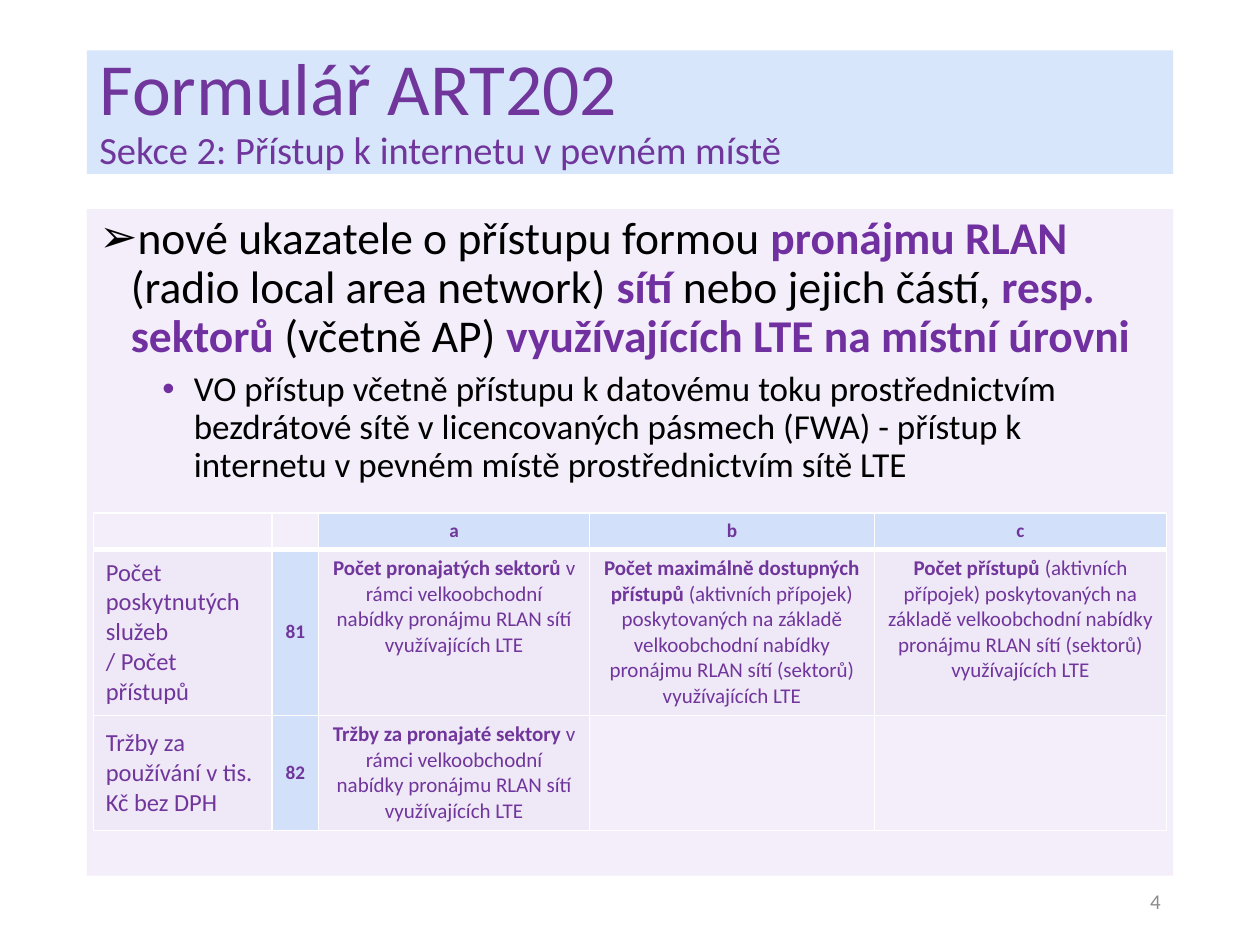
import pptx
import pptx.util
import pptx.dml.color
import pptx.enum.shapes
import pptx.enum.text
import pptx.oxml.ns
import lxml.etree

Inches, Pt = pptx.util.Inches, pptx.util.Pt
ALIGN, ANCHOR = pptx.enum.text.PP_ALIGN, pptx.enum.text.MSO_ANCHOR
qn = pptx.oxml.ns.qn

THEME = {
    "font": "Calibri", "alpha": 65, "spacing": 0.9,
    "blue": "C2D9FA", "lilac": "EEE5F7", "purple": "70369B", "accent": "7030A0",
    "black": "000000", "white": "FFFFFF", "grey": "8C8C8C",
    "title": 42, "subtitle": 22, "body": 26, "detail": 20,
    "label": 14, "cell": 12, "code": 11, "number": 12,
}

# A run is (text, is_bold).
TITLE = [("Formulář ART202", "title"),
         ("Sekce 2: Přístup k internetu v pevném místě", "subtitle")]
BODY = [
    {"runs": [("nové ukazatele o přístupu formou ", False), ("pronájmu RLAN ", True),
              ("(radio local area network) ", False), ("sítí ", True),
              ("nebo jejich částí, ", False), ("resp. sektorů", True),
              (" (včetně AP) ", False), ("využívajících LTE na místní úrovni", True)],
     "size": "body", "level": 0, "indent": 0.25, "bullet": "➢", "bullet_color": "black", "before": 0},
    {"runs": [("VO přístup včetně přístupu k datovému toku prostřednictvím bezdrátové sítě "
               "v licencovaných pásmech (FWA) - přístup k internetu v pevném místě "
               "prostřednictvím sítě LTE", False)],
     "size": "detail", "level": 1, "indent": 0.75, "bullet": "•", "bullet_color": "accent", "before": 5},
]
LEASE = "v rámci velkoobchodní nabídky pronájmu RLAN sítí využívajících LTE"
ACCESS = ("(aktivních přípojek) poskytovaných na základě velkoobchodní nabídky "
          "pronájmu RLAN sítí (sektorů) využívajících LTE")
HEADER = ["", "", "a", "b", "c"]
ROWS = [
    (["Počet poskytnutých služeb", "/ Počet přístupů"], "81",
     [("Počet pronajatých sektorů ", LEASE),
      ("Počet maximálně dostupných přístupů ", ACCESS),
      ("Počet přístupů ", ACCESS)]),
    (["Tržby za používání v tis. Kč bez DPH"], "82",
     [("Tržby za pronajaté sektory ", LEASE), None, None]),
]
COL_WIDTHS = [1.42, 0.37, 2.15, 2.26, 2.32]
ROW_HEIGHTS = [0.28, 1.28, 0.88]
LEFT, WIDTH = 0.69, 8.62


def rgb(name):
    return pptx.dml.color.RGBColor.from_string(THEME[name])


def fill_tint(fill, props, color):
    """Fill with a theme colour at the theme's opacity; props holds the fill XML."""
    fill.solid()
    fill.fore_color.rgb = rgb(color)
    clr = props.find(qn("a:solidFill")).find(qn("a:srgbClr"))
    lxml.etree.SubElement(clr, qn("a:alpha"), val=str(THEME["alpha"] * 1000))


def add_run(p, text, size, color, bold=False):
    r = p.add_run()
    r.text = text
    r.font.name = THEME["font"]
    r.font.size = Pt(THEME[size])
    r.font.bold = bold
    r.font.color.rgb = rgb(color)


def paragraphs(tf, count):
    return [tf.paragraphs[0]] + [tf.add_paragraph() for _ in range(count - 1)]


def add_panel(s, top, height, color, anchor):
    sp = s.shapes.add_shape(pptx.enum.shapes.MSO_SHAPE.RECTANGLE,
                            Inches(LEFT), Inches(top), Inches(WIDTH), Inches(height))
    sp.shadow.inherit = False
    sp.line.fill.background()
    fill_tint(sp.fill, sp._element.spPr, color)
    sp.text_frame.word_wrap = True
    sp.text_frame.vertical_anchor = anchor
    return sp.text_frame


def set_bullet(p, item):
    pPr = p._p.get_or_add_pPr()
    pPr.set("marL", str(Inches(item["indent"])))
    pPr.set("indent", str(Inches(-0.25)))
    clr = lxml.etree.SubElement(pPr, qn("a:buClr"))
    lxml.etree.SubElement(clr, qn("a:srgbClr"), val=THEME[item["bullet_color"]])
    lxml.etree.SubElement(pPr, qn("a:buFont"), typeface="Arial")
    lxml.etree.SubElement(pPr, qn("a:buChar"), char=item["bullet"])


def add_body(s):
    tf = add_panel(s, 1.66, 5.29, "lilac", ANCHOR.TOP)
    for p, item in zip(paragraphs(tf, len(BODY)), BODY):
        p.level = item["level"]
        p.alignment = ALIGN.LEFT
        p.line_spacing = THEME["spacing"]
        p.space_before = Pt(item["before"])
        set_bullet(p, item)
        for text, bold in item["runs"]:
            add_run(p, text, item["size"], "accent" if bold else "black", bold)


def add_title(s):
    tf = add_panel(s, 0.4, 0.98, "blue", ANCHOR.MIDDLE)
    for p, (text, size) in zip(paragraphs(tf, len(TITLE)), TITLE):
        p.alignment = ALIGN.LEFT
        p.line_spacing = THEME["spacing"]
        add_run(p, text, size, "purple")


def set_borders(cell, widths):
    """Draw the cell's edges; border XML has to come before the fill."""
    tcPr = cell._tc.get_or_add_tcPr()
    for i, (side, width) in enumerate(widths.items()):
        ln = lxml.etree.Element(qn("a:ln" + side), w=str(Pt(width)))
        fill = lxml.etree.SubElement(ln, qn("a:solidFill"))
        lxml.etree.SubElement(fill, qn("a:srgbClr"), val=THEME["white"])
        tcPr.insert(i, ln)


def fill_cell(cell, lines, size, color, align=ALIGN.CENTER, anchor=ANCHOR.MIDDLE):
    """Write lines, each a list of runs; a cell without lines stays clear."""
    cell.vertical_anchor = anchor
    if not lines:
        cell.fill.background()
        end = cell.text_frame.paragraphs[0]._p.get_or_add_endParaRPr()
        end.set("sz", str(THEME[size] * 100))
        return
    fill_tint(cell.fill, cell._tc.get_or_add_tcPr(), color)
    for p, runs in zip(paragraphs(cell.text_frame, len(lines)), lines):
        p.alignment = align
        for text, bold in runs:
            add_run(p, text, size, "purple", bold)


def add_indicator_table(s):
    frame = s.shapes.add_table(len(ROW_HEIGHTS), len(COL_WIDTHS), Inches(0.74), Inches(4.07),
                               Inches(sum(COL_WIDTHS)), Inches(sum(ROW_HEIGHTS)))
    table = frame.table
    table.first_row = table.horz_banding = False
    for col, width in zip(table.columns, COL_WIDTHS):
        col.width = Inches(width)
    for row, height in zip(table.rows, ROW_HEIGHTS):
        row.height = Inches(height)

    for c, text in enumerate(HEADER):
        fill_cell(table.cell(0, c), [[(text, True)]] if text else [], "code", "blue")
    for r, (label, code, texts) in enumerate(ROWS, 1):
        fill_cell(table.cell(r, 0), [[(line, False)] for line in label],
                  "label", "lilac", align=ALIGN.LEFT)
        fill_cell(table.cell(r, 1), [[(code, True)]], "code", "blue")
        for c, text in enumerate(texts, 2):
            lines = [[(text[0], True), (text[1], False)]] if text else []
            fill_cell(table.cell(r, c), lines, "cell", "lilac", anchor=ANCHOR.TOP)

    for r in range(len(ROW_HEIGHTS)):
        for c in range(len(COL_WIDTHS)):
            set_borders(table.cell(r, c), {"L": 1, "R": 1, "T": 3 if r == 1 else 1,
                                           "B": 3 if r == 0 else 1})


def add_slide_number(s):
    sp = s.shapes.add_textbox(Inches(7.06), Inches(6.95), Inches(2.25), Inches(0.4))
    sp.text_frame.word_wrap = True
    sp.text_frame.vertical_anchor = ANCHOR.MIDDLE
    p = sp.text_frame.paragraphs[0]
    p.alignment = ALIGN.RIGHT
    add_run(p, "4", "number", "grey")


def main():
    prs = pptx.Presentation()
    prs.slide_width, prs.slide_height = Inches(10), Inches(7.5)
    s = prs.slides.add_slide(prs.slide_layouts[6])
    add_body(s)
    add_indicator_table(s)
    add_title(s)
    add_slide_number(s)
    prs.save("out.pptx")


if __name__ == "__main__":
    main()
